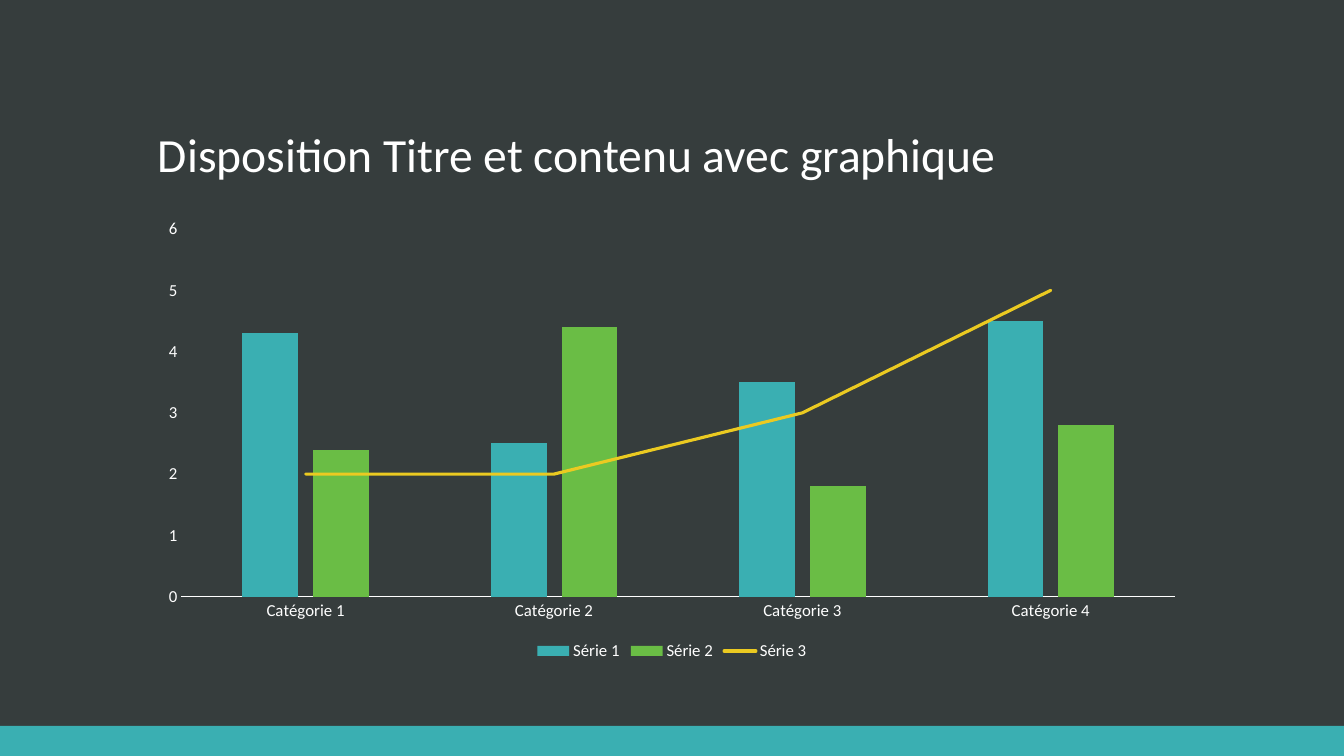
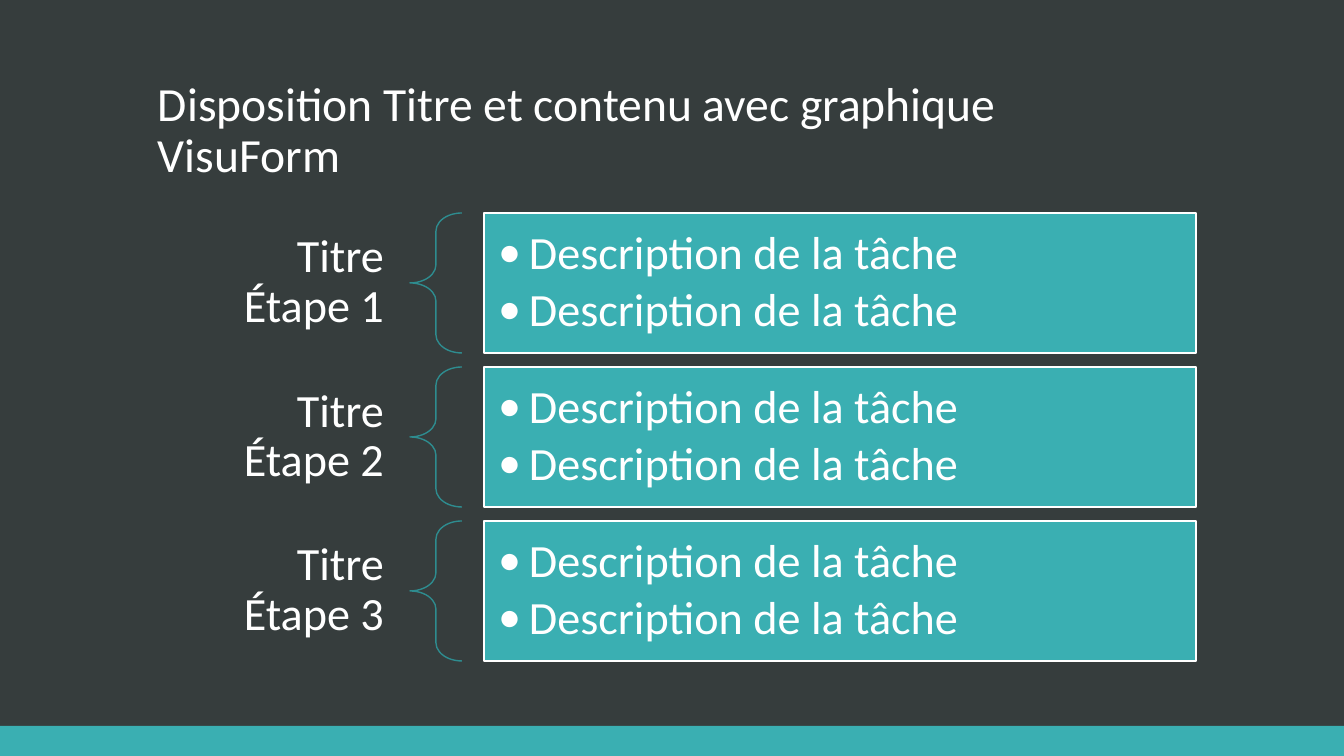
"""Build a title-and-chart slide and a title-and-steps slide."""
import pptx
import pptx.chart.data
import pptx.dml.color
import pptx.enum.chart
import pptx.enum.shapes
import pptx.enum.text
import pptx.oxml
import pptx.oxml.ns
import pptx.util

NO_BREAK_SPACE = chr(160)
CHART_TITLE = "Disposition Titre et contenu avec graphique"
STEPS_TITLE = "Disposition Titre et contenu avec graphique VisuForm"
CATEGORIES = ["Catégorie 1", "Catégorie 2", "Catégorie 3", "Catégorie 4"]
SERIES = [
    ("Série 1", [4.3, 2.5, 3.5, 4.5], "3AAFB2"),
    ("Série 2", [2.4, 4.4, 1.8, 2.8], "6ABD45"),
    ("Série 3", [2, 2, 3, 5], "EBCA21"),
]
STEPS = [
    (f"Titre Étape{NO_BREAK_SPACE}1", ["Description de la tâche", "Description de la tâche"]),
    (f"Titre Étape{NO_BREAK_SPACE}2", ["Description de la tâche", "Description de la tâche"]),
    (f"Titre Étape{NO_BREAK_SPACE}3", ["Description de la tâche", "Description de la tâche"]),
]

FONT = "Calibri"
BACKGROUND, TEAL, DARK_TEAL, WHITE = "363D3D", "3AAFB2", "2E8C8F", "FFFFFF"
SLIDE_WIDTH, SLIDE_HEIGHT, BAND_HEIGHT = 1344, 756, 30
CONTENT_LEFT, CONTENT_WIDTH = 148, 1048
STEP_TOP, STEP_HEIGHT, STEP_GAP = 213, 140, 14
LABEL_WIDTH, LABEL_MARGIN, BRACE_WIDTH, BOX_GAP = 262, 9, 52, 22

MSO_SHAPE = pptx.enum.shapes.MSO_SHAPE
ANCHOR = pptx.enum.text.MSO_ANCHOR
ALIGN = pptx.enum.text.PP_ALIGN


def px(length):
    return pptx.util.Emu(round(length * 914400 / 100.8))


def color(value):
    return pptx.dml.color.RGBColor.from_string(value)


def paint(fill, value):
    fill.solid()
    fill.fore_color.rgb = color(value)


def draw_line(line, value, width):
    paint(line.fill, value)
    line.width = pptx.util.Pt(width)


def format_font(font, size, value=WHITE):
    font.name, font.size = FONT, pptx.util.Pt(size)
    font.color.rgb = color(value)


def add_bullet(paragraph, indent):
    properties = paragraph._p.get_or_add_pPr()
    properties.set("marL", str(px(indent)))
    properties.set("indent", str(-px(indent)))
    namespace = pptx.oxml.ns.nsdecls("a")
    for tag in (f'buFont {namespace} typeface="{FONT}"', f'buChar {namespace} char="•"'):
        properties.append(pptx.oxml.parse_xml(f"<a:{tag}/>"))


def write(shape, lines, size=33, align=ALIGN.LEFT, anchor=ANCHOR.MIDDLE,
          margins=(10, 5), after=0, bullet_indent=None):
    frame = shape.text_frame
    frame.word_wrap = True
    frame.auto_size = pptx.enum.text.MSO_AUTO_SIZE.NONE
    frame.vertical_anchor = anchor
    frame.margin_left = frame.margin_right = px(margins[0])
    frame.margin_top = frame.margin_bottom = px(margins[1])
    for index, line in enumerate(lines):
        paragraph = frame.add_paragraph() if index else frame.paragraphs[0]
        paragraph.alignment = align
        paragraph.line_spacing = 0.9
        paragraph.space_before = pptx.util.Pt(0)
        paragraph.space_after = pptx.util.Pt(after)
        if bullet_indent:
            add_bullet(paragraph, bullet_indent)
        run = paragraph.add_run()
        run.text = line
        format_font(run.font, size)


def add_shape(slide, kind, box, fill=None, line=None):
    shape = slide.shapes.add_shape(kind, *map(px, box))
    shape.shadow.inherit = False
    if fill:
        paint(shape.fill, fill)
    else:
        shape.fill.background()
    if line:
        draw_line(shape.line, line, 1)
    else:
        shape.line.fill.background()
    return shape


def add_slide(presentation, title_text):
    slide = presentation.slides.add_slide(presentation.slide_layouts[5])
    add_shape(slide, MSO_SHAPE.RECTANGLE,
              (0, SLIDE_HEIGHT - BAND_HEIGHT, SLIDE_WIDTH, BAND_HEIGHT), fill=TEAL)
    title = slide.shapes.title
    title.left, title.top = px(CONTENT_LEFT), px(52)
    title.width, title.height = px(CONTENT_WIDTH), px(136)
    write(title, [title_text], size=34, anchor=ANCHOR.BOTTOM)
    return slide


def move_last_series_to_line(chart):
    bars = chart.element.xpath(".//c:barChart")[0]
    series = bars.xpath("c:ser")[-1]
    for inverted in series.xpath("c:invertIfNegative"):
        series.remove(inverted)
    axes = "".join(f'<c:axId val="{identifier}"/>'
                   for identifier in bars.xpath("c:axId/@val"))
    line_plot = pptx.oxml.parse_xml(
        f'<c:lineChart {pptx.oxml.ns.nsdecls("c")}><c:grouping val="standard"/>'
        f'<c:varyColors val="0"/><c:marker val="1"/>{axes}</c:lineChart>')
    line_plot.insert(2, series)
    bars.addnext(line_plot)


def add_chart(slide):
    data = pptx.chart.data.CategoryChartData()
    data.categories = CATEGORIES
    for name, values, _ in SERIES:
        data.add_series(name, values)
    chart = slide.shapes.add_chart(
        pptx.enum.chart.XL_CHART_TYPE.COLUMN_CLUSTERED,
        px(CONTENT_LEFT), px(210), px(CONTENT_WIDTH), px(455), data).chart
    chart.has_title = False
    format_font(chart.font, 10)
    chart.has_legend = True
    chart.legend.position = pptx.enum.chart.XL_LEGEND_POSITION.BOTTOM
    chart.legend.include_in_layout = False
    format_font(chart.legend.font, 12)
    for axis in (chart.category_axis, chart.value_axis):
        axis.has_major_gridlines = False
        axis.major_tick_mark = pptx.enum.chart.XL_TICK_MARK.NONE
        axis.minor_tick_mark = pptx.enum.chart.XL_TICK_MARK.NONE
        format_font(axis.tick_labels.font, 12)
    draw_line(chart.category_axis.format.line, WHITE, 0.75)
    value_axis = chart.value_axis
    value_axis.format.line.fill.background()
    value_axis.minimum_scale, value_axis.maximum_scale = 0, 6
    value_axis.major_unit = 1

    move_last_series_to_line(chart)
    bar_plot, line_plot = chart.plots
    bar_plot.vary_by_categories = False
    bar_plot.gap_width, bar_plot.overlap = 219, -27
    for series, (_, _, value) in zip(bar_plot.series, SERIES):
        paint(series.format.fill, value)
    line_series = line_plot.series[0]
    line_series.smooth = False
    line_series.marker.style = pptx.enum.chart.XL_MARKER_STYLE.NONE
    draw_line(line_series.format.line, SERIES[-1][2], 2.25)
    chart.element.xpath(".//c:lineChart/c:ser/c:spPr/a:ln")[0].set("cap", "rnd")


def add_step(slide, top, label_text, tasks):
    brace_left = CONTENT_LEFT + LABEL_WIDTH
    box_left = brace_left + BRACE_WIDTH + BOX_GAP
    box_width = CONTENT_LEFT + CONTENT_WIDTH - box_left
    label = slide.shapes.add_textbox(*map(px, (
        CONTENT_LEFT, top + LABEL_MARGIN, LABEL_WIDTH,
        STEP_HEIGHT - 2 * LABEL_MARGIN)))
    write(label, [label_text], align=ALIGN.RIGHT, margins=(26, 9))
    brace = add_shape(slide, MSO_SHAPE.LEFT_BRACE,
                      (brace_left, top, BRACE_WIDTH, STEP_HEIGHT), line=DARK_TEAL)
    brace.adjustments[0], brace.adjustments[1] = 0.35, 0.5
    box = add_shape(slide, MSO_SHAPE.RECTANGLE,
                    (box_left, top, box_width, STEP_HEIGHT), fill=TEAL, line=WHITE)
    write(box, tasks, margins=(14, 14), after=5, bullet_indent=31)


def main():
    presentation = pptx.Presentation()
    presentation.slide_width = px(SLIDE_WIDTH)
    presentation.slide_height = px(SLIDE_HEIGHT)
    paint(presentation.slide_master.background.fill, BACKGROUND)
    add_chart(add_slide(presentation, CHART_TITLE))
    steps_slide = add_slide(presentation, STEPS_TITLE)
    for index, (label_text, tasks) in enumerate(STEPS):
        top = STEP_TOP + index * (STEP_HEIGHT + STEP_GAP)
        add_step(steps_slide, top, label_text, tasks)
    presentation.save("out.pptx")


if __name__ == "__main__":
    main()
